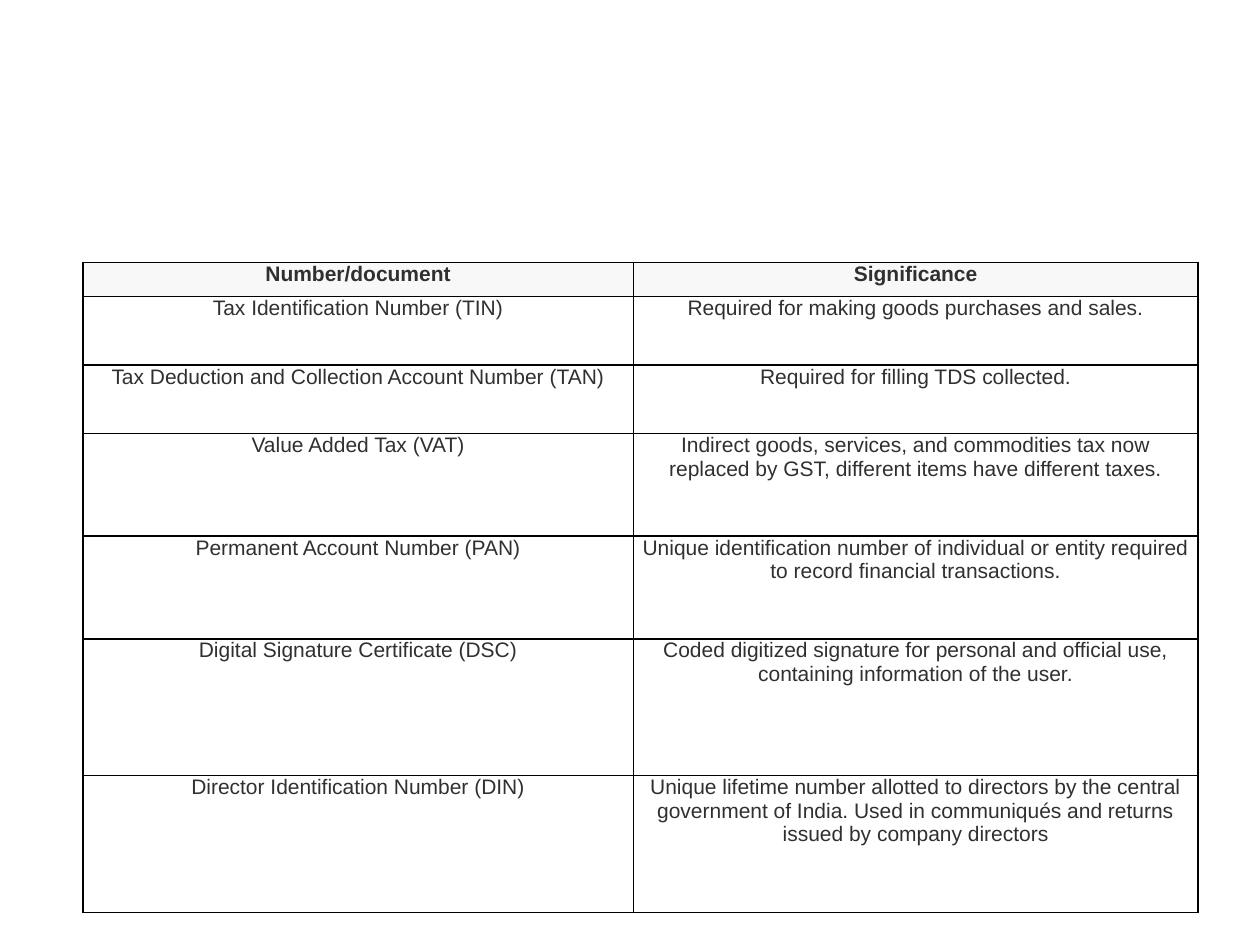
from lxml import etree
from pptx import Presentation
from pptx import util as u
from pptx.dml.color import RGBColor
from pptx.enum import text
from pptx.oxml import ns

INK = RGBColor(0x30, 0x30, 0x30)
HEADER_FILL = RGBColor(0xF8, 0xF8, 0xF8)
BODY_FILL = RGBColor(0xFF, 0xFF, 0xFF)
BORDER = RGBColor(0, 0, 0)

HEADER = ("Number/document", "Significance")
DOCUMENTS = [
    ("Tax Identification Number (TIN)", "Required for making goods purchases and sales.", 2),
    ("Tax Deduction and Collection Account Number (TAN)", "Required for filling TDS collected.", 2),
    ("Value Added Tax (VAT)",
     "Indirect goods, services, and commodities tax now replaced by GST, "
     "different items have different taxes.", 3),
    ("Permanent Account Number (PAN)",
     "Unique identification number of individual or entity required to record "
     "financial transactions.", 3),
    ("Digital Signature Certificate (DSC)",
     "Coded digitized signature for personal and official use, containing "
     "information of the user.", 4),
    ("Director Identification Number (DIN)",
     "Unique lifetime number allotted to directors by the central government of "
     "India. Used in communiqués and returns issued by company directors", 4),
]

LEFT, TOP = 1.67, 5.29
COLUMN_WIDTHS = (11.1, 11.38)
ROW_UNIT = 0.69


def add_borders(cell):
    properties = cell._tc.get_or_add_tcPr()
    for index, side in enumerate(("lnL", "lnR", "lnT", "lnB")):
        line = etree.Element(ns.qn(f"a:{side}"), w=str(u.Pt(1)))
        fill = etree.SubElement(line, ns.qn("a:solidFill"))
        etree.SubElement(fill, ns.qn("a:srgbClr"), val=str(BORDER))
        properties.insert(index, line)


def write_cell(cell, content, bold=False, fill=BODY_FILL):
    cell.fill.solid()
    cell.fill.fore_color.rgb = fill
    cell.margin_left = cell.margin_right = u.Cm(0.18)
    cell.margin_top = cell.margin_bottom = 0
    para = cell.text_frame.paragraphs[0]
    para.alignment = text.PP_ALIGN.CENTER
    span = para.add_run()
    span.text = content
    span.font.name = "Arial"
    span.font.size = u.Pt(12)
    span.font.bold = bold
    span.font.color.rgb = INK
    add_borders(cell)


def main():
    deck = Presentation()
    deck.slide_width, deck.slide_height = u.Cm(25.4), u.Cm(19.05)
    page = deck.slides.add_slide(deck.slide_layouts[6])

    rows = [(*HEADER, 1), *DOCUMENTS]
    total_units = sum(units for *_, units in rows)
    table = page.shapes.add_table(
        len(rows), len(HEADER), u.Cm(LEFT), u.Cm(TOP),
        u.Cm(sum(COLUMN_WIDTHS)), u.Cm(total_units * ROW_UNIT)).table
    for column, width in zip(table.columns, COLUMN_WIDTHS):
        column.width = u.Cm(width)

    for row_index, (*contents, units) in enumerate(rows):
        table.rows[row_index].height = u.Cm(units * ROW_UNIT)
        is_header = row_index == 0
        for column_index, content in enumerate(contents):
            write_cell(table.cell(row_index, column_index), content, bold=is_header,
                       fill=HEADER_FILL if is_header else BODY_FILL)

    deck.save("out.pptx")


if __name__ == "__main__":
    main()
